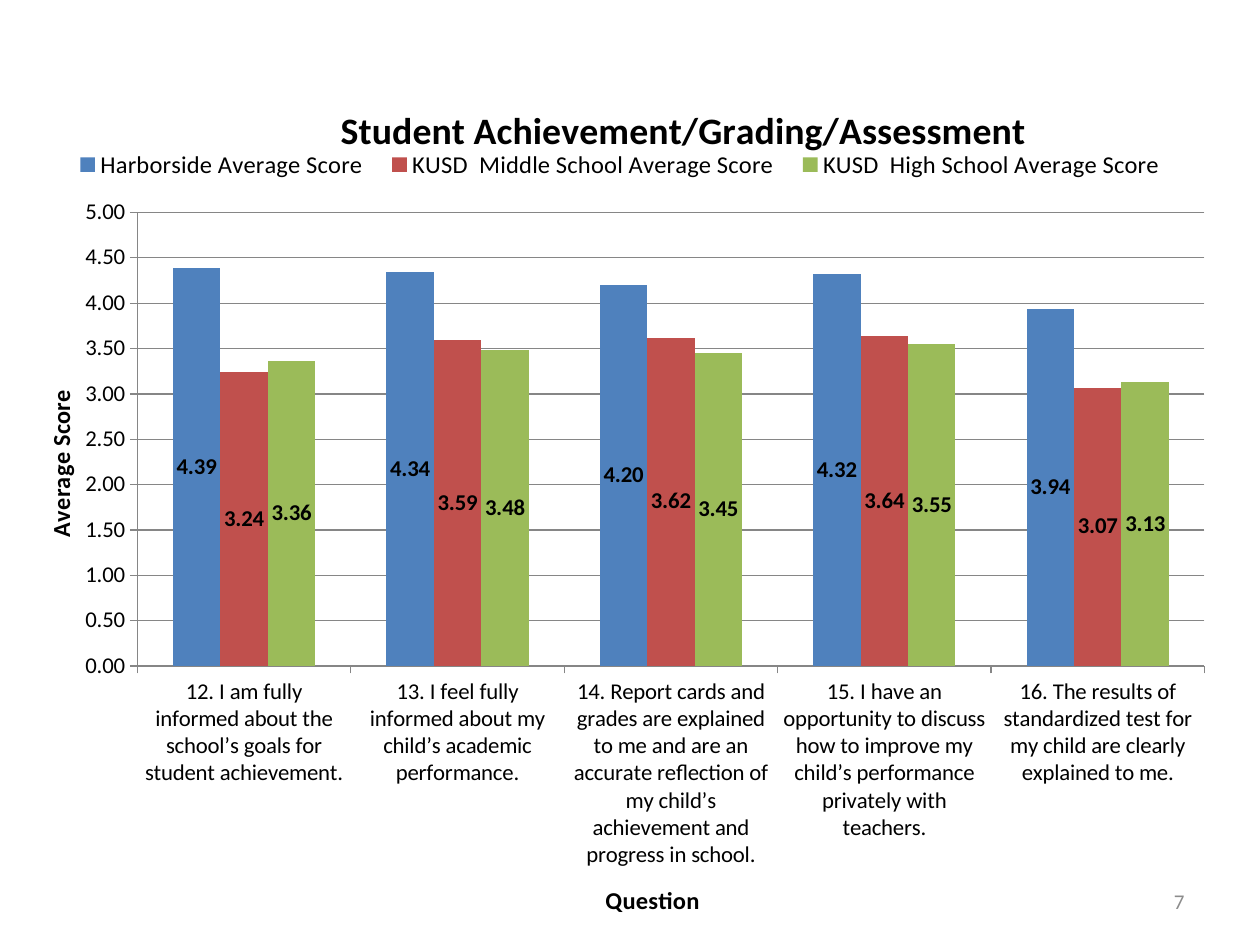
from dataclasses import dataclass

from lxml.etree import SubElement
from pptx import Presentation
from pptx.chart.data import CategoryChartData
from pptx.dml.color import RGBColor
from pptx.enum.chart import XL_CHART_TYPE as ChartType, XL_LABEL_POSITION as LabelPosition
from pptx.enum.chart import XL_LEGEND_POSITION as LegendPosition, XL_TICK_MARK as TickMark
from pptx.enum.text import MSO_ANCHOR as Anchor, PP_ALIGN as Align
from pptx.oxml.ns import qn
from pptx.util import Inches, Pt

FONT = "Calibri"
COLORS = {
    "text": "000000",
    "axis": "868686",
    "page": "8C8C8C",
    "harborside": "4F81BD",
    "middle": "C0504D",
    "high": "9BBB59",
}
CHART_WIDTH, CHART_HEIGHT = 9.5, 6.76


@dataclass
class School:
    name: str
    color: str
    scores: tuple


QUESTIONS = (
    "12. I am fully informed about the school’s goals for student achievement.",
    "13. I feel fully informed about my child’s academic performance.",
    "14. Report cards and grades are explained to me and are an accurate reflection "
    "of my child’s achievement and progress in school.",
    "15. I have an opportunity to discuss how to improve my child’s performance "
    "privately with teachers.",
    "16. The results of standardized test for my child are clearly explained to me.",
)
SCHOOLS = (
    School("Harborside Average Score", "harborside", (4.39, 4.34, 4.20, 4.32, 3.94)),
    School("KUSD  Middle School Average Score", "middle", (3.24, 3.59, 3.62, 3.64, 3.07)),
    School("KUSD  High School Average Score", "high", (3.36, 3.48, 3.45, 3.55, 3.13)),
)


def rgb(color: str) -> RGBColor:
    return RGBColor.from_string(COLORS[color])


def style_font(font, size: float, bold: bool = False, color: str = "text") -> None:
    font.name = FONT
    font.size = Pt(size)
    font.bold = bold
    font.color.rgb = rgb(color)


def write_text(frame, text: str, *, size: float, bold: bool = False,
               color: str = "text", align=None) -> None:
    paragraph = frame.paragraphs[0]
    paragraph.alignment = align
    run = paragraph.add_run()
    run.text = text
    style_font(run.font, size, bold, color)


def place(part, left: float, top: float, width: float = 0, height: float = 0,
          inner: bool = False) -> None:
    for old_layout in part.findall(qn("c:layout")):
        part.remove(old_layout)
    layout = SubElement(part, qn("c:layout"))
    overlay = part.find(qn("c:overlay"))
    if overlay is None:
        part.insert(0, layout)
    else:
        overlay.addprevious(layout)
    manual = SubElement(layout, qn("c:manualLayout"))
    settings = [("layoutTarget", "inner")] if inner else []
    settings += [("xMode", "edge"), ("yMode", "edge"),
                 ("x", left / CHART_WIDTH), ("y", top / CHART_HEIGHT)]
    if width:
        settings += [("w", width / CHART_WIDTH), ("h", height / CHART_HEIGHT)]
    for tag, value in settings:
        SubElement(manual, qn(f"c:{tag}")).set("val", str(value))


def style_axis(axis, title: str, left: float, top: float) -> None:
    write_text(axis.axis_title.text_frame, title, size=14, bold=True)
    place(axis.axis_title._element, left, top)
    axis.major_tick_mark = TickMark.OUTSIDE
    axis.minor_tick_mark = TickMark.NONE
    axis.format.line.color.rgb = rgb("axis")
    style_font(axis.tick_labels.font, 13)


def add_score_chart(slide) -> None:
    score_data = CategoryChartData(number_format="0.00")
    score_data.categories = QUESTIONS
    for school in SCHOOLS:
        score_data.add_series(school.name, school.scores)
    chart = slide.shapes.add_chart(
        ChartType.COLUMN_CLUSTERED, Inches(0.17), Inches(0.57),
        Inches(CHART_WIDTH), Inches(CHART_HEIGHT), score_data).chart
    style_font(chart.font, 10)

    chart.has_title = True
    write_text(chart.chart_title.text_frame, "Student Achievement/Grading/Assessment",
               size=21.6, bold=True)
    place(chart.chart_title._element, 2.48, 0.2)

    chart.has_legend = True
    chart.legend.position = LegendPosition.TOP
    chart.legend.include_in_layout = False
    style_font(chart.legend.font, 14)
    place(chart.legend._element, 0.3, 0.59, 8.9, 0.31)

    style_axis(chart.category_axis, "Question", 4.6, 6.48)
    scores = chart.value_axis
    style_axis(scores, "Average Score", 0.14, 2.53)
    scores.minimum_scale, scores.maximum_scale, scores.major_unit = 0, 5, 0.5
    scores.tick_labels.number_format = "0.00"
    scores.tick_labels.number_format_is_linked = False
    scores.has_major_gridlines = True
    scores.major_gridlines.format.line.color.rgb = rgb("axis")

    columns = chart.plots[0]
    columns.gap_width = 150
    columns.overlap = 0
    columns.vary_by_categories = False
    place(columns._element.getparent(), 0.92, 1.13, 8.47, 3.64, inner=True)
    for series, school in zip(columns.series, SCHOOLS):
        series.format.fill.solid()
        series.format.fill.fore_color.rgb = rgb(school.color)
        labels = series.data_labels
        labels.show_value = True
        labels.position = LabelPosition.CENTER
        labels.number_format = "0.00"
        labels.number_format_is_linked = False
        style_font(labels.font, 13, bold=True)


def add_page_number(slide) -> None:
    frame = slide.shapes.add_textbox(
        Inches(7.17), Inches(6.95), Inches(2.33), Inches(0.4)).text_frame
    frame.word_wrap = True
    frame.vertical_anchor = Anchor.MIDDLE
    write_text(frame, "7", size=12, color="page", align=Align.RIGHT)


def main() -> None:
    deck = Presentation()
    deck.slide_width, deck.slide_height = Inches(10), Inches(7.5)
    slide = deck.slides.add_slide(deck.slide_layouts[6])
    add_score_chart(slide)
    add_page_number(slide)
    deck.save("out.pptx")


if __name__ == "__main__":
    main()
